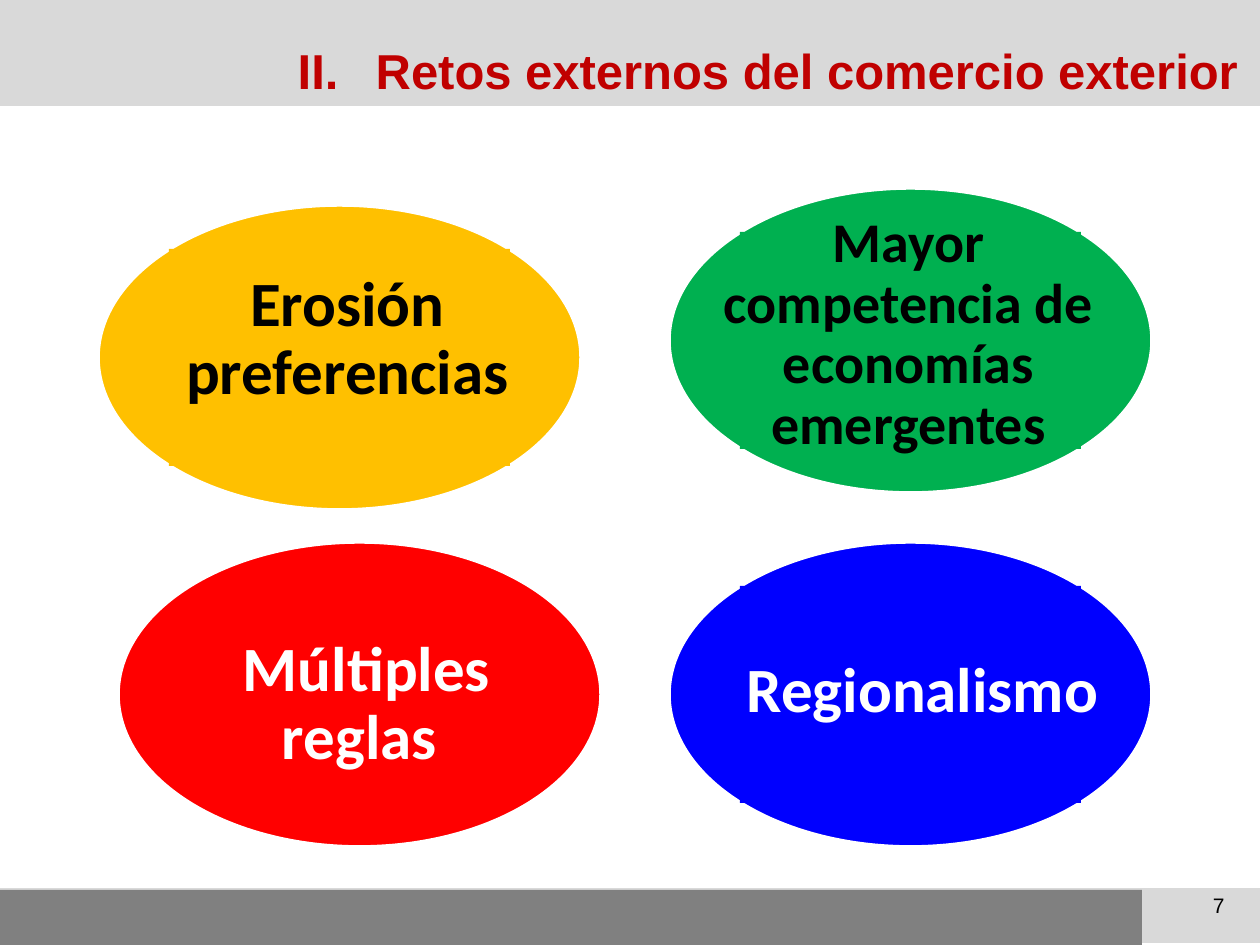
from lxml import etree
from pptx import Presentation, util as u
from pptx.dml.color import RGBColor
from pptx.enum import shapes, text
from pptx.oxml.ns import qn

SCALE = 914400 / 126
KIND = shapes.MSO_SHAPE


def px(*vals):
    return [u.Emu(round(v * SCALE)) for v in vals]


def rgb(code):
    return RGBColor.from_string(code)


class Deck:
    """Holds the style and the current slide, and draws each kind of element."""

    oval = 483, 305
    core = 341, 217
    mid = text.PP_ALIGN.CENTER
    right = text.PP_ALIGN.RIGHT

    def __init__(self):
        self.prs = Presentation()
        self.prs.slide_width, self.prs.slide_height = px(1260, 945)
        self.slide = self.prs.slides.add_slide(self.prs.slide_layouts[6])

    def shape(self, kind, box, fill, edge=None):
        item = self.slide.shapes.add_shape(kind, *px(*box))
        item.shadow.inherit = False
        item.fill.solid()
        item.fill.fore_color.rgb = rgb(fill)
        if edge:
            item.line.color.rgb = rgb(edge)
            item.line.width = u.Pt(2)
        else:
            item.line.fill.background()

    def label(self, box, words, size, color, face="Arial", bold=False,
              align=right, pad=None, gap=None, anchor=text.MSO_ANCHOR.MIDDLE):
        frame = self.slide.shapes.add_textbox(*px(*box)).text_frame
        frame.word_wrap = True
        frame.vertical_anchor = anchor
        if pad is not None:
            frame.margin_left = frame.margin_right = pad
            frame.margin_top = frame.margin_bottom = pad
        para = frame.paragraphs[0]
        para.text = words
        para.alignment = align
        para.line_spacing = gap
        font = para.font
        font.name, font.size, font.bold = face, u.Pt(size), bold
        font.color.rgb = rgb(color)
        return para

    def number(self, para, start, indent):
        props = para._p.get_or_add_pPr()
        wide, = px(indent)
        props.set("marL", str(wide))
        props.set("indent", str(-wide))
        mark = etree.Element(qn("a:buAutoNum"), type="romanUcPeriod", startAt=str(start))
        props.insert_element_before(mark, "a:tabLst", "a:defRPr", "a:extLst")

    def bubble(self, spot, fill, box, words, size, color, core=True):
        left, top = spot
        self.shape(KIND.OVAL, (*spot, *self.oval), fill, "FFFFFF")
        if core:
            self.shape(KIND.RECTANGLE, (left + 71, top + 44, *self.core), fill)
        self.label(box, words, size, color, "Calibri", True, self.mid, 0, 0.9)


def main():
    deck = Deck()
    for box, fill in (
        ((0, 888, 1260, 55), "D9D9D9"),
        ((0, 0, 1260, 106), "D9D9D9"),
        ((0, 890, 1142, 55), "808080"),
    ):
        deck.shape(KIND.RECTANGLE, box, fill)

    title = deck.label((-64, 43, 1314, 53), "Retos externos del comercio exterior",
                       28, "C00000", bold=True)
    deck.number(title, 2, 78)

    for row in (
        ((118, 542), "FF0000", (158, 614, 403, 183), " Múltiples reglas", 36, "FFFFFF", False),
        ((669, 542), "0000FF", (709, 601, 427, 183), "Regionalismo", 36, "FFFFFF"),
        ((98, 205), "FFC000", (158, 249, 379, 183), "Erosión preferencias", 36, "000000"),
        ((669, 188), "00B050", (719, 244, 379, 183),
         "Mayor competencia de economías emergentes", 32, "000000"),
    ):
        deck.bubble(*row)

    deck.label((1126, 886, 111, 50), "7", 12, "000000", anchor=text.MSO_ANCHOR.TOP)
    deck.prs.save("out.pptx")


if __name__ == "__main__":
    main()
